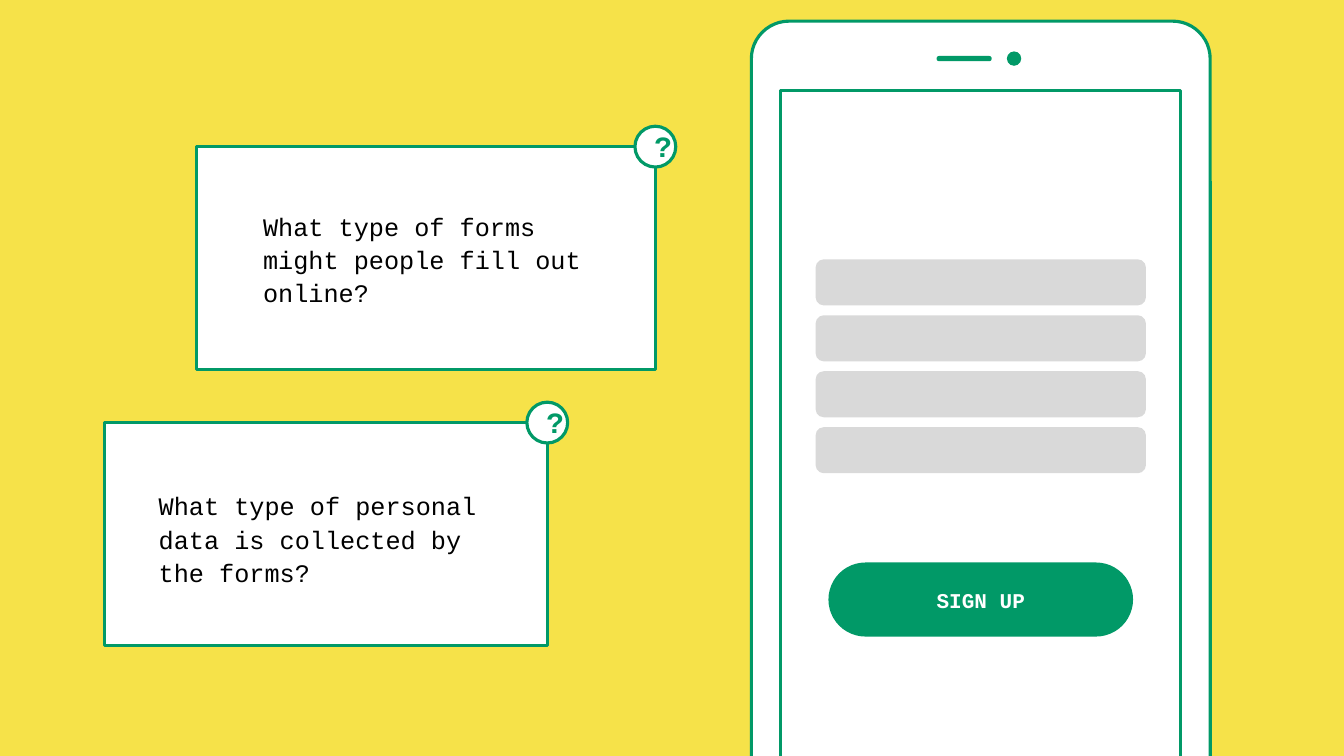
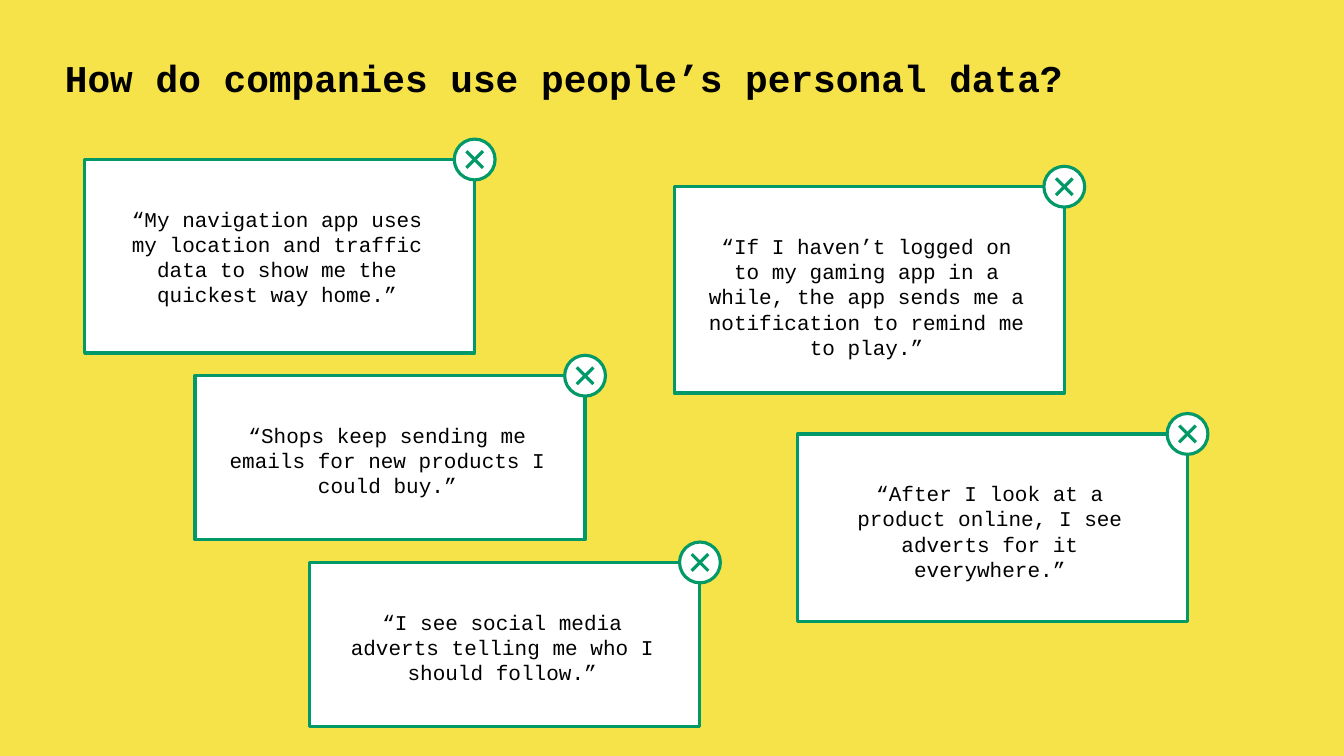
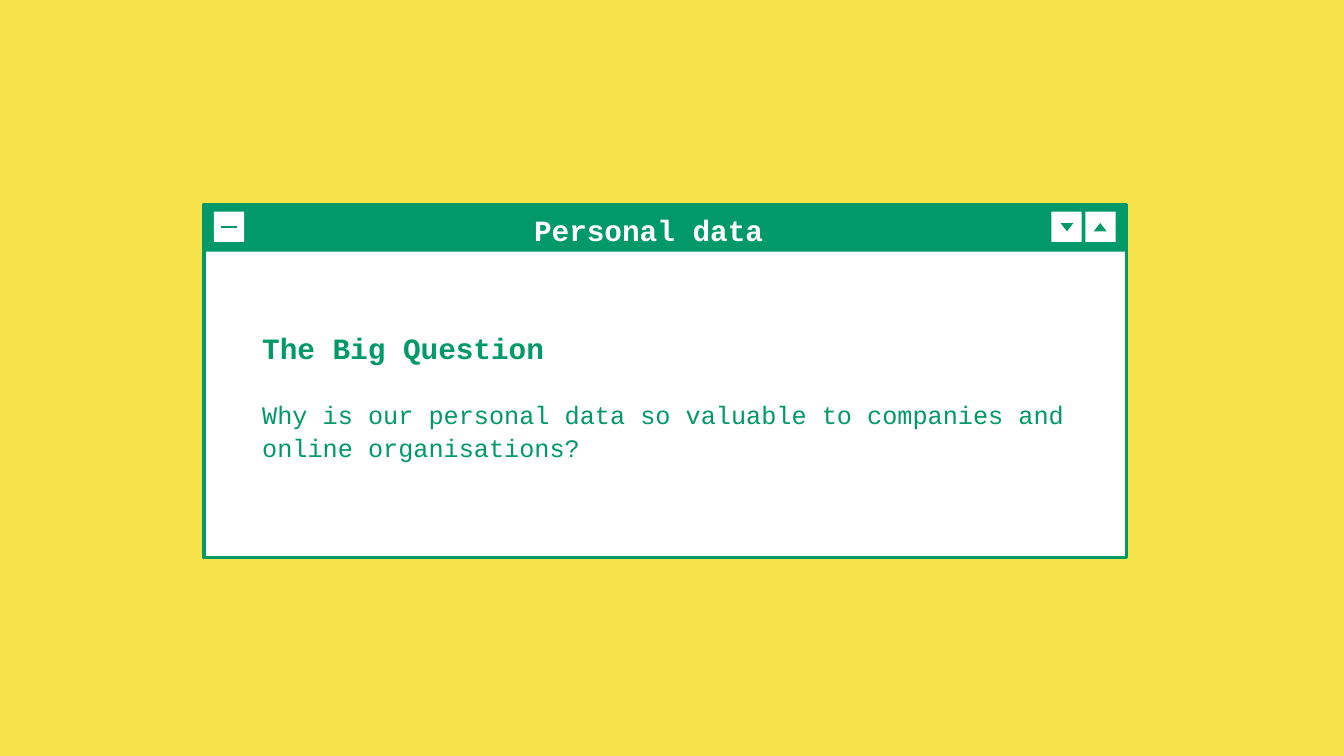
from lxml.etree import SubElement
from pptx import Presentation
from pptx.dml.color import RGBColor
from pptx.enum.shapes import MSO_CONNECTOR as Wire, MSO_SHAPE as Kind
from pptx.enum.text import MSO_ANCHOR as Anchor, MSO_AUTO_SIZE as Fit, PP_ALIGN as Align
from pptx.oxml.ns import qn
from pptx.util import Inches, Pt

FONT = "Courier New"
YELLOW, GREEN, WHITE, GREY, BLACK = "F6E249", "019967", "FFFFFF", "D9D9D9", "000000"
WIDE = (0.13, 0.07)
SLIM = (0.1, 0.05)
BADGE = 0.54

ASKS = [
    ((1.38, 5.59, 5.86, 2.95), (1.97, 6.38, 5, 1.47),
     "What type of personal data is collected by the forms?"),
    ((2.6, 1.94, 6.07, 2.95), (3.35, 2.68, 4.65, 1.48),
     "What type of forms might people fill out online?"),
]
FIELDS = 4
BUTTON = "SIGN UP"

TITLE = "How do companies use people’s personal data?"
QUOTES = [
    (10.55, 5.74, 2.48, 4,
     "“After I look at a product online, I see adverts for it everywhere.”"),
    (1.12, 2.11, 2.56, 4,
     "“My navigation app uses my location and traffic data to show me the quickest way home.”"),
    (2.58, 4.97, 2.17, 3,
     "“Shops keep sending me emails for new products I could buy.”"),
    (8.92, 2.47, 2.73, 5,
     "“If I haven’t logged on to my gaming app in a while, the app sends me a notification to remind me to play.”"),
    (4.1, 7.44, 2.17, 3,
     "“I see social media adverts telling me who I should follow.”"),
]

BAR = "Personal data"
HEAD = "The Big Question"
BODY = "Why is our personal data so valuable to companies and online organisations?"


def color(code):
    return RGBColor.from_string(code)


def inches(nums):
    return [Inches(n) for n in nums]


def shape(pen, kind, at, fill, line=None, adj=None, turn=0):
    item = pen.add_shape(kind, *inches(at))
    item.shadow.inherit = False
    item.fill.solid()
    item.fill.fore_color.rgb = color(fill)
    if line:
        item.line.color.rgb = color(line)
        item.line.width = Pt(3)
    else:
        item.line.fill.background()
    if adj is not None:
        item.adjustments[0] = adj
    item.rotation = turn


def stroke(pen, start, end, width=3):
    item = pen.add_connector(Wire.STRAIGHT, *inches(start + end))
    item.line.color.rgb = color(GREEN)
    item.line.width = Pt(width)
    SubElement(item.element.spPr, qn("a:effectLst"))


def box(pen, at, inset=SLIM, anchor=Anchor.TOP, grow=False):
    item = pen.add_textbox(*inches(at))
    frame = item.text_frame
    frame.word_wrap = True
    frame.vertical_anchor = anchor
    frame.margin_left = frame.margin_right = Inches(inset[0])
    frame.margin_top = frame.margin_bottom = Inches(inset[1])
    if grow:
        frame.auto_size = Fit.SHAPE_TO_FIT_TEXT
    return frame


def write(para, text, size, ink=BLACK, bold=False, align=Align.LEFT,
          space=None, before=None, after=None):
    para.alignment = align
    if space:
        para.line_spacing = space
    if before:
        para.space_before = Pt(before)
    if after:
        para.space_after = Pt(after)
    run = para.add_run()
    run.text = text
    font = run.font
    font.name, font.size, font.bold = FONT, Pt(size), bold
    font.color.rgb = color(ink)


def page(deck):
    slide = deck.slides.add_slide(deck.slide_layouts[6])
    fill = slide.background.fill
    fill.solid()
    fill.fore_color.rgb = color(YELLOW)
    return slide.shapes


def group(pen):
    return pen.add_group_shape().shapes


def card(pen, at):
    left, top, width, _ = at
    right = left + width
    shape(pen, Kind.RECTANGLE, at, WHITE, GREEN)
    shape(pen, Kind.OVAL, (right - BADGE / 2, top - BADGE / 2, BADGE, BADGE), WHITE, GREEN)
    return right, top


def phone(pen):
    rnd = Kind.ROUNDED_RECTANGLE
    body = group(pen)
    shape(body, rnd, (9.94, 0.28, 6.07, 11.6), WHITE, GREEN, 0.082)
    shape(body, rnd, (10.33, 1.2, 5.29, 9.61), WHITE, GREEN, 0)
    shape(body, rnd, (12.39, 0.74, 0.73, 0.07), GREEN, adj=0.5)
    shape(body, Kind.OVAL, (13.32, 0.68, 0.19, 0.19), GREEN)
    form = group(pen)
    for row in range(FIELDS):
        shape(form, rnd, (10.79, 3.43 + 0.74 * row, 4.37, 0.61), GREY, adj=0.177)
    shape(form, rnd, (10.96, 7.44, 4.03, 0.98), GREEN, adj=0.5)
    label = box(form, (10.33, 7.45, 5.29, 0.98), WIDE, Anchor.MIDDLE)
    write(label.paragraphs[0], BUTTON, 20, WHITE, True, Align.CENTER, after=15)


def ask(pen, at, spot, text):
    pen = group(pen)
    right, top = card(pen, at)
    mark = box(pen, (right - 0.11, top - 0.23, 0.23, 0.49), anchor=Anchor.MIDDLE)
    write(mark.paragraphs[0], "?", 28, GREEN, True, Align.CENTER, 0.9, 12)
    write(box(pen, spot, WIDE).paragraphs[0], text, 24, space=1.1)


def quote(pen, left, top, height, lines, text):
    pen = group(pen)
    x, y = card(pen, (left, top, 5.16, height))
    arm = 0.11
    stroke(pen, (x + arm, y - arm), (x - arm, y + arm))
    stroke(pen, (x - arm, y - arm), (x + arm, y + arm))
    frame = box(pen, (left + 0.33, top + 0.57, 4.43, lines * 0.34 + 0.1), grow=True)
    write(frame.paragraphs[0], text, 20, align=Align.CENTER)


def window(pen):
    pen = group(pen)
    left, top, width = 2.7, 2.7, 12.2
    shape(pen, Kind.RECTANGLE, (left, top, width, 4.68), WHITE, GREEN)
    shape(pen, Kind.RECTANGLE, (left, top, width, 0.63), GREEN)
    bar = box(pen, (3.27, 2.79, 10.62, 0.55), anchor=Anchor.MIDDLE)
    write(bar.paragraphs[0], BAR, 28, WHITE, True, Align.CENTER, 0.9, 12)
    for x in (2.83, 13.91, 14.36):
        shape(pen, Kind.RECTANGLE, (x, 2.8, 0.4, 0.4), WHITE)
    stroke(pen, (2.93, 3), (3.13, 3), 2.25)
    for x, turn in ((14.03, 180), (14.47, 0)):
        shape(pen, Kind.ISOSCELES_TRIANGLE, (x, 2.95, 0.17, 0.11), GREEN, turn=turn)
    frame = box(pen, (3.37, 4.32, 11.01, 2.82))
    write(frame.paragraphs[0], HEAD, 28, GREEN, True)
    write(frame.add_paragraph(), BODY, 24, GREEN, space=1.1, before=29)


def main():
    deck = Presentation()
    deck.slide_width, deck.slide_height = Inches(17.78), Inches(10)

    pen = page(deck)
    phone(pen)
    for item in ASKS:
        ask(pen, *item)

    pen = page(deck)
    title = box(pen, (0.76, 0.67, 13.98, 0.86))
    write(title.paragraphs[0], TITLE, 36, bold=True)
    for item in QUOTES:
        quote(pen, *item)

    window(page(deck))
    deck.save("out.pptx")


if __name__ == "__main__":
    main()
